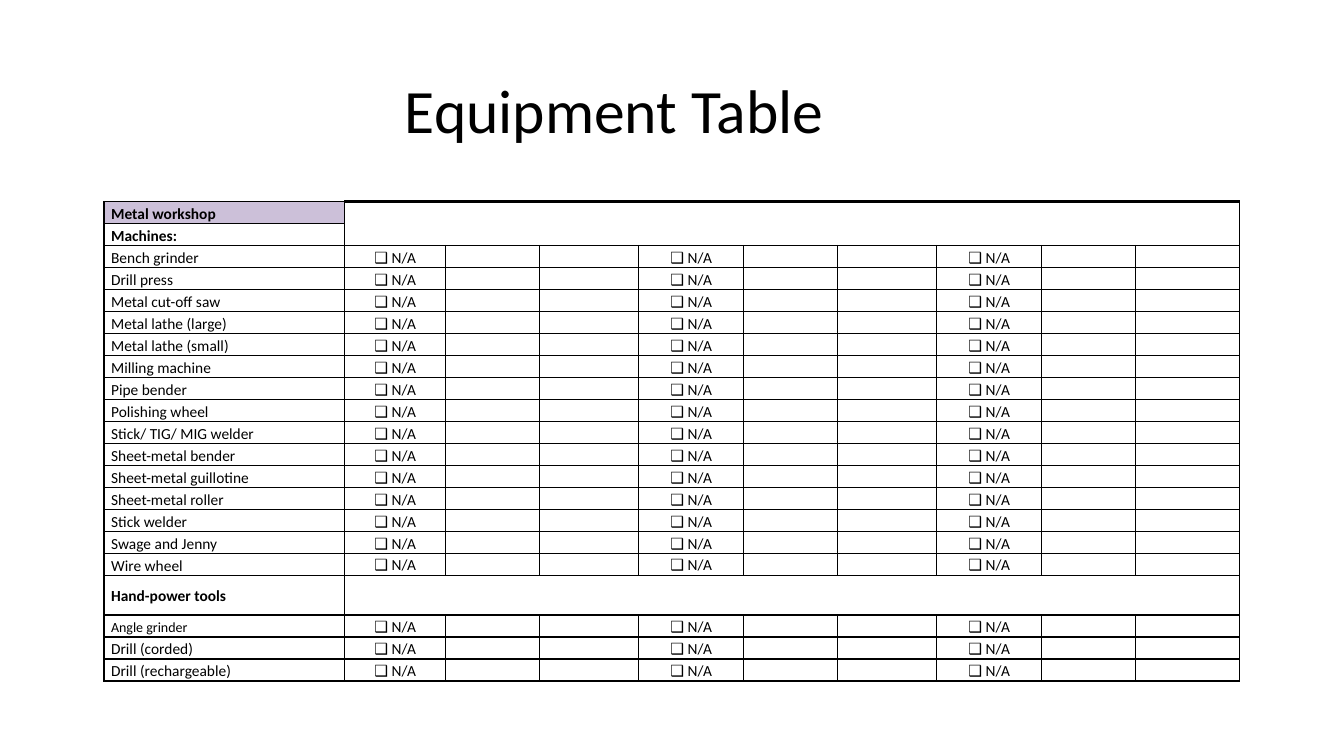
from dataclasses import dataclass

from lxml import etree
from pptx import Presentation
from pptx.dml import color
from pptx.enum import text
from pptx.oxml import ns
from pptx.util import Cm, Pt


@dataclass(frozen=True)
class Theme:
    font: str = "Calibri"
    ink: str = "000000"
    section_fill: str = "CCC0D9"
    title_size: float = 44
    body_size: float = 11
    small_size: float = 10
    thin: float = 1
    thick: float = 2.25


# Content: section headings and the equipment listed under them
WORKSHOP, MACHINES, HAND_TOOLS = "Metal workshop", "Machines:", "Hand-power tools"
SMALL_LABEL = "Angle grinder"
HEADINGS = (WORKSHOP, MACHINES, HAND_TOOLS)
LABELS = [
    WORKSHOP, MACHINES,
    "Bench grinder", "Drill press", "Metal cut-off saw", "Metal lathe (large)",
    "Metal lathe (small)", "Milling machine", "Pipe bender", "Polishing wheel",
    "Stick/ TIG/ MIG welder", "Sheet-metal bender", "Sheet-metal guillotine",
    "Sheet-metal roller", "Stick welder", "Swage and Jenny", "Wire wheel",
    HAND_TOOLS,
    SMALL_LABEL, "Drill (corded)", "Drill (rechargeable)",
]
NOT_APPLICABLE = "❑ N/A"
CHECK_COLUMNS = (1, 4, 7)
COLUMN_WIDTHS = (6.07, 2.54, 2.36, 2.51, 2.64, 2.36, 2.51, 2.64, 2.36, 2.62)
TABLE_HEIGHT, TALL_ROW = 12.09, 1.0


class SlideBuilder:
    def __init__(self, slide, theme):
        self.slide = slide
        self.theme = theme

    def add_run(self, paragraph, wording, size, bold=False):
        run = paragraph.add_run()
        run.text = wording
        run.font.name = self.theme.font
        run.font.size = Pt(size)
        run.font.bold = bold
        run.font.color.rgb = color.RGBColor.from_string(self.theme.ink)

    def title(self, wording, left, top, width, height, indent):
        heading = self.slide.shapes.title
        heading.left, heading.top = Cm(left), Cm(top)
        heading.width, heading.height = Cm(width), Cm(height)
        heading.text_frame.vertical_anchor = text.MSO_ANCHOR.MIDDLE
        paragraph = heading.text_frame.paragraphs[0]
        paragraph.alignment = text.PP_ALIGN.LEFT
        paragraph.line_spacing = 0.9
        properties = paragraph._p.get_or_add_pPr()
        properties.set("marL", str(Cm(indent)))
        properties.set("indent", "0")
        self.add_run(paragraph, wording, self.theme.title_size)

    def table(self, left, top, widths, heights):
        grid = self.slide.shapes.add_table(
            len(heights), len(widths), Cm(left), Cm(top),
            Cm(sum(widths)), Cm(sum(heights))).table
        grid.first_row = grid.horz_banding = False
        for column, width in zip(grid.columns, widths):
            column.width = Cm(width)
        for row, height in zip(grid.rows, heights):
            row.height = Cm(height)
        return grid

    def borders(self, cell, top, bottom):
        properties = cell._tc.get_or_add_tcPr()
        thin = self.theme.thin
        for side, weight in (("L", thin), ("R", thin), ("T", top), ("B", bottom)):
            line = etree.SubElement(properties, ns.qn(f"a:ln{side}"), w=str(Pt(weight)))
            fill = etree.SubElement(line, ns.qn("a:solidFill"))
            etree.SubElement(fill, ns.qn("a:srgbClr"), val=self.theme.ink)

    def cell(self, cell, wording="", size=None, bold=False, centred=False,
             fill=None, top=None, bottom=None):
        size = size or self.theme.body_size
        self.borders(cell, top or self.theme.thin, bottom or self.theme.thin)
        if fill:
            cell.fill.solid()
            cell.fill.fore_color.rgb = color.RGBColor.from_string(fill)
        else:
            cell.fill.background()
        cell.margin_left = cell.margin_right = Cm(0.18)
        cell.margin_top = cell.margin_bottom = 0
        cell.vertical_anchor = text.MSO_ANCHOR.TOP if centred else text.MSO_ANCHOR.MIDDLE
        paragraph = cell.text_frame.paragraphs[0]
        paragraph.line_spacing = 1.15
        paragraph.alignment = text.PP_ALIGN.CENTER if centred else text.PP_ALIGN.LEFT
        if wording:
            self.add_run(paragraph, wording, size, bold)
        else:
            # An empty cell keeps its row low through its end mark
            etree.SubElement(paragraph._p, ns.qn("a:endParaRPr"), sz=str(int(size * 100)))


def main():
    theme = Theme()
    deck = Presentation()
    deck.slide_width, deck.slide_height = Cm(33.87), Cm(19.05)
    builder = SlideBuilder(deck.slides.add_slide(deck.slide_layouts[5]), theme)

    # Title
    builder.title("Equipment Table", 2.33, 1.01, 29.21, 3.68, indent=7.62)

    # Table grid
    plain_row = (TABLE_HEIGHT - TALL_ROW) / (len(LABELS) - 1)
    heights = [TALL_ROW if label == HAND_TOOLS else plain_row for label in LABELS]
    equipment = builder.table(2.62, 5.08, COLUMN_WIDTHS, heights)

    # Labels and check cells
    last_row, last_column = len(LABELS) - 1, len(COLUMN_WIDTHS) - 1
    for row, label in enumerate(LABELS):
        heading = label in HEADINGS
        builder.cell(equipment.cell(row, 0), label, bold=heading,
                     size=theme.small_size if label == SMALL_LABEL else None,
                     fill=theme.section_fill if label == WORKSHOP else None)
        for column in range(1, last_column + 1):
            checked = column in CHECK_COLUMNS and not heading
            builder.cell(equipment.cell(row, column),
                         NOT_APPLICABLE if checked else "", centred=checked,
                         top=theme.thick if row == 0 else None,
                         bottom=theme.thick if row == last_row else None)

    # Blank bands beside the headings
    tools_row = LABELS.index(HAND_TOOLS)
    for first, last in ((0, 1), (tools_row, tools_row)):
        equipment.cell(first, 1).merge(equipment.cell(last, last_column))

    deck.save("out.pptx")


if __name__ == "__main__":
    main()
